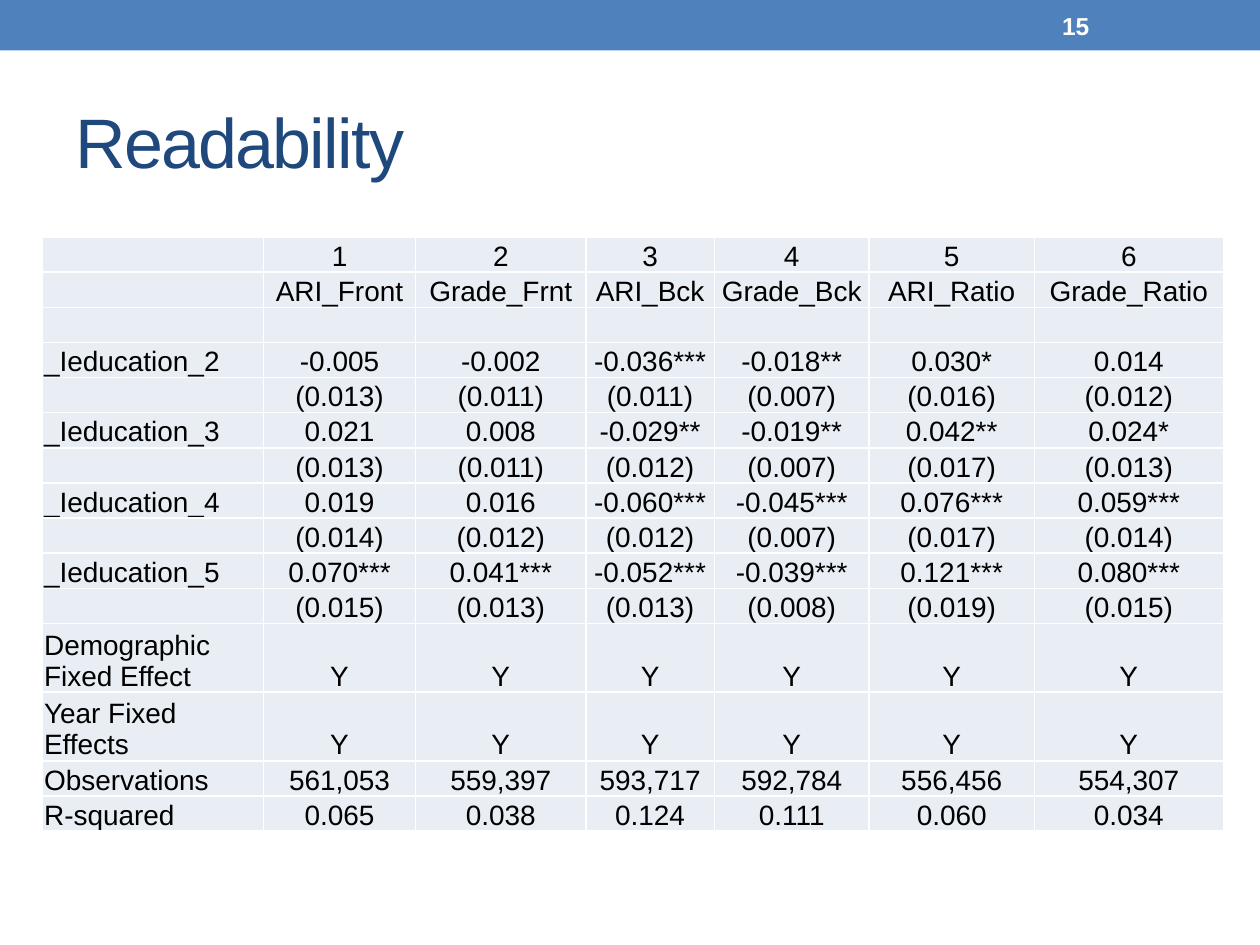
import pptx
import pptx.util
import pptx.dml.color
import pptx.enum.shapes
import pptx.enum.text
import pptx.oxml
import pptx.oxml.ns

Cm = pptx.util.Cm
Pt = pptx.util.Pt
RGBColor = pptx.dml.color.RGBColor
Align = pptx.enum.text.PP_ALIGN
Anchor = pptx.enum.text.MSO_ANCHOR

BLUE = RGBColor(0x4F, 0x81, 0xBD)
NAVY = RGBColor(0x1F, 0x49, 0x7D)
PALE = RGBColor(0xE9, 0xED, 0xF4)
WHITE = RGBColor(0xFF, 0xFF, 0xFF)
BLACK = RGBColor(0, 0, 0)

TITLE = {"name": "Arial", "size": Pt(40), "bold": False}
PAGE = {"name": "Arial", "size": Pt(14), "bold": True}
BODY = {"name": "Arial", "size": Pt(16), "bold": False}
CELL = {
    "vertical_anchor": Anchor.BOTTOM,
    "margin_left": Cm(0.03),
    "margin_right": Cm(0.03),
    "margin_top": Cm(0.03),
    "margin_bottom": Cm(0),
}

WIDTHS = [4.45, 3.07, 3.43, 2.59, 3.12, 3.33, 3.81]
LOW, MID, TALL = 0.67, 0.7, 1.28
ROWS = [
    (LOW, "", "1 2 3 4 5 6"),
    (MID, "", "ARI_Front Grade_Frnt ARI_Bck Grade_Bck ARI_Ratio Grade_Ratio"),
    (LOW, "", ""),
    (LOW, "_Ieducation_2", "-0.005 -0.002 -0.036*** -0.018** 0.030* 0.014"),
    (MID, "", "(0.013) (0.011) (0.011) (0.007) (0.016) (0.012)"),
    (LOW, "_Ieducation_3", "0.021 0.008 -0.029** -0.019** 0.042** 0.024*"),
    (MID, "", "(0.013) (0.011) (0.012) (0.007) (0.017) (0.013)"),
    (LOW, "_Ieducation_4", "0.019 0.016 -0.060*** -0.045*** 0.076*** 0.059***"),
    (MID, "", "(0.014) (0.012) (0.012) (0.007) (0.017) (0.014)"),
    (LOW, "_Ieducation_5", "0.070*** 0.041*** -0.052*** -0.039*** 0.121*** 0.080***"),
    (MID, "", "(0.015) (0.013) (0.013) (0.008) (0.019) (0.015)"),
    (TALL, "Demographic Fixed Effect", "Y Y Y Y Y Y"),
    (TALL, "Year Fixed Effects", "Y Y Y Y Y Y"),
    (LOW, "Observations", "561,053 559,397 593,717 592,784 556,456 554,307"),
    (LOW, "R-squared", "0.065 0.038 0.124 0.111 0.060 0.034"),
]


def apply(item, style):
    for key, value in style.items():
        setattr(item, key, value)


def add_run(para, text, style, color):
    run = para.add_run()
    run.text = text
    apply(run.font, style)
    run.font.color.rgb = color
    return run


def add_text(slide, box, text, style, color):
    frame = slide.shapes.add_textbox(*map(Cm, box)).text_frame
    apply(frame, {"word_wrap": True, "vertical_anchor": Anchor.MIDDLE})
    return add_run(frame.paragraphs[0], text, style, color)


def add_band(slide, box, page):
    left, top, width, height = box
    band = slide.shapes.add_shape(
        pptx.enum.shapes.MSO_SHAPE.RECTANGLE, *map(Cm, box))
    band.shadow.inherit = False
    band.fill.solid()
    band.fill.fore_color.rgb = BLUE
    band.line.fill.background()
    spot = (left + width - 4.24, top + 0.05, 2.97, height - 0.1)
    add_text(slide, spot, page, PAGE, WHITE)


def add_title(slide, box, text):
    run = add_text(slide, box, text, TITLE, NAVY)
    run.font._element.set("spc", "-100")


def add_edges(cell):
    props = cell._tc.get_or_add_tcPr()
    for spot, side in enumerate(("lnL", "lnR", "lnT", "lnB")):
        props.insert(spot, pptx.oxml.parse_xml(
            f'<a:{side} {pptx.oxml.ns.nsdecls("a")} w="{Pt(1)}"><a:solidFill>'
            f'<a:srgbClr val="{WHITE}"/></a:solidFill></a:{side}>'))


def fill_cell(cell, text, align):
    apply(cell, CELL)
    cell.fill.solid()
    cell.fill.fore_color.rgb = PALE
    add_edges(cell)
    para = cell.text_frame.paragraphs[0]
    para.alignment = align
    if text:
        add_run(para, text, BODY, BLACK)
    else:
        para._p.append(pptx.oxml.parse_xml(
            f'<a:endParaRPr {pptx.oxml.ns.nsdecls("a")} sz="1600"/>'))


def add_grid(slide, box):
    table = slide.shapes.add_table(
        len(ROWS), len(WIDTHS), *map(Cm, box)).table
    apply(table, {"first_row": False, "horz_banding": False})
    for col, width in zip(table.columns, WIDTHS):
        col.width = Cm(width)
    for row, (height, label, values) in zip(table.rows, ROWS):
        row.height = Cm(height)
        texts = [label] + (values.split() or [""] * (len(WIDTHS) - 1))
        for col, (cell, text) in enumerate(zip(row.cells, texts)):
            fill_cell(cell, text, Align.CENTER if col else Align.LEFT)


def main():
    deck = pptx.Presentation()
    apply(deck, {"slide_width": Cm(25.4), "slide_height": Cm(19.05)})
    slide = deck.slides.add_slide(deck.slide_layouts[6])
    add_band(slide, (0, 0, 25.4, 1.02), "15")
    add_title(slide, (1.27, 1.47, 22.86, 2.74), "Readability")
    high = sum(row[0] for row in ROWS)
    add_grid(slide, (0.86, 4.78, sum(WIDTHS), high))
    deck.save("out.pptx")


if __name__ == "__main__":
    main()
